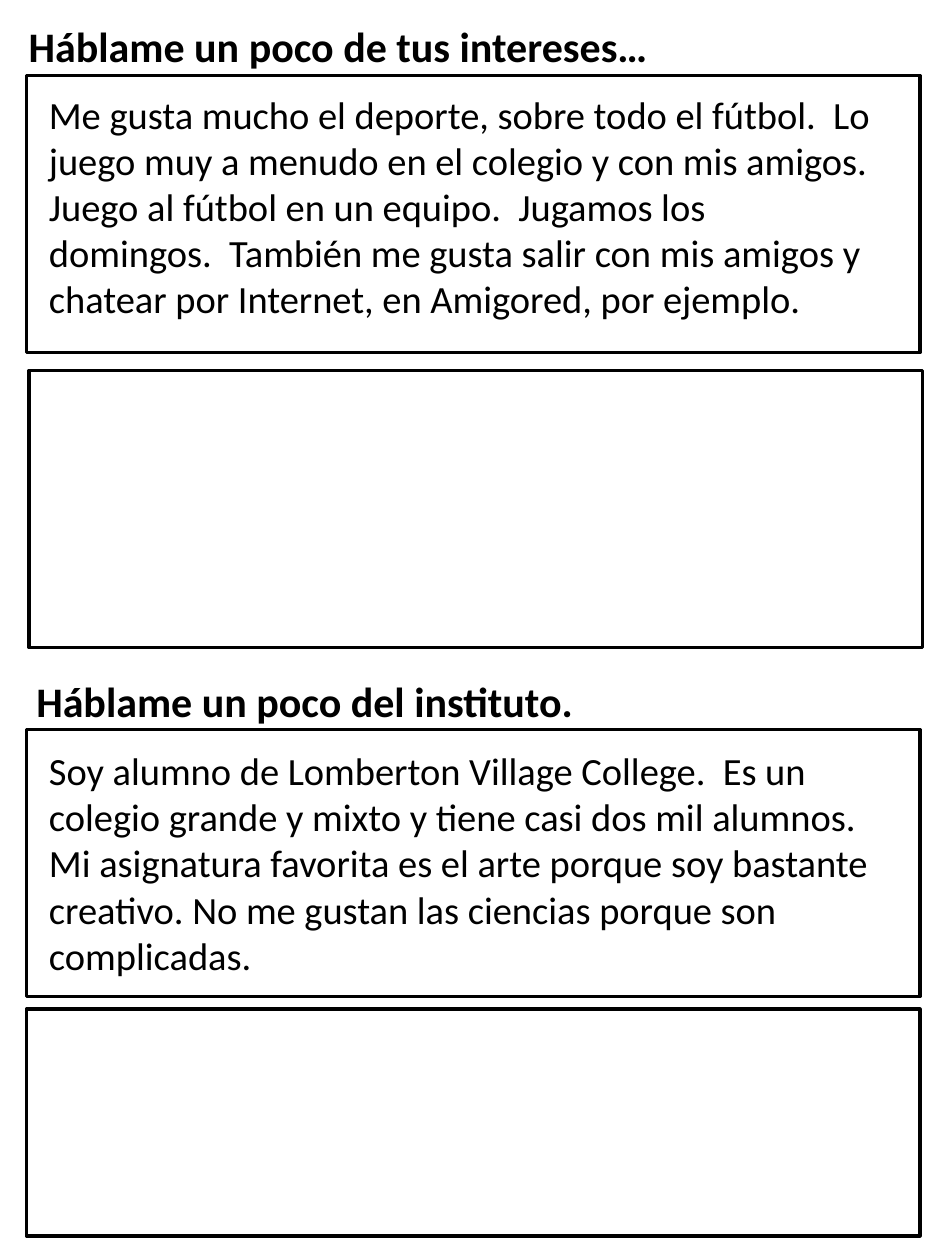
from pptx import Presentation
from pptx.dml.color import RGBColor
from pptx.enum.shapes import MSO_SHAPE as Shape
from pptx.enum.text import MSO_AUTO_SIZE as AutoSize
from pptx.util import Inches, Pt

FONT = "Calibri"
BLACK = "000000"
FRAME_WIDTH = 7.09
HEADING_WIDTH, HEADING_HEIGHT = 7.17, 0.5
ANSWER_LEFT, ANSWER_HEIGHT = 0.29, 1.95

# Each section: heading, model answer, and an empty frame to write in.
# Positions are (left, top); frames are (left, top, height).
SECTIONS = [
    {
        "heading": "Háblame un poco de tus intereses…",
        "heading_at": (0.13, 0.11),
        "answer": [
            "Me gusta mucho el deporte, sobre todo el fútbol.  Lo juego muy a "
            "menudo en el colegio y con mis amigos.  Juego al fútbol en un "
            "equipo.  Jugamos los domingos.  También me gusta salir con mis "
            "amigos y chatear por Internet, en Amigored, por ejemplo.",
        ],
        "answer_top": 0.67,
        "answer_width": 6.77,
        "answer_frame": (0.21, 0.6, 2.2),
        "empty_frame": (0.23, 2.94, 2.2),
    },
    {
        "heading": "Háblame un poco del instituto.",
        "heading_at": (0.19, 5.31),
        "answer": [
            "Soy alumno de Lomberton Village College.  Es un colegio grande y "
            "mixto y tiene casi dos mil alumnos.",
            "Mi asignatura favorita es el arte porque soy bastante creativo. "
            "No me gustan las ciencias porque son complicadas.",
        ],
        "answer_top": 5.88,
        "answer_width": 7.15,
        "answer_frame": (0.21, 5.79, 2.12),
        "empty_frame": (0.21, 8.01, 1.8),
    },
]


def color(hex_string):
    return RGBColor.from_string(hex_string)


def add_frame(slide, left, top, height):
    shape = slide.shapes.add_shape(
        Shape.RECTANGLE, Inches(left), Inches(top), Inches(FRAME_WIDTH), Inches(height))
    shape.shadow.inherit = False
    shape.fill.background()
    shape.line.color.rgb = color(BLACK)
    shape.line.width = Pt(2)


def add_text(slide, left, top, width, height, lines, size, bold=False):
    box = slide.shapes.add_textbox(
        Inches(left), Inches(top), Inches(width), Inches(height))
    text_frame = box.text_frame
    text_frame.word_wrap = True
    text_frame.auto_size = AutoSize.SHAPE_TO_FIT_TEXT
    text_frame.text = "\n".join(lines)
    for paragraph in text_frame.paragraphs:
        for run in paragraph.runs:
            run.font.name = FONT
            run.font.size = Pt(size)
            run.font.bold = bold
            run.font.color.rgb = color(BLACK)


def main():
    presentation = Presentation()
    presentation.slide_width = Inches(7.5)
    presentation.slide_height = Inches(10)
    slide = presentation.slides.add_slide(presentation.slide_layouts[6])

    for section in SECTIONS:
        # Heading
        add_text(slide, *section["heading_at"], HEADING_WIDTH, HEADING_HEIGHT,
                 [section["heading"]], 24, bold=True)
        # Framed model answer
        add_frame(slide, *section["answer_frame"])
        add_text(slide, ANSWER_LEFT, section["answer_top"], section["answer_width"],
                 ANSWER_HEIGHT, section["answer"], 22)
        # Empty frame
        add_frame(slide, *section["empty_frame"])

    presentation.save("out.pptx")


if __name__ == "__main__":
    main()
